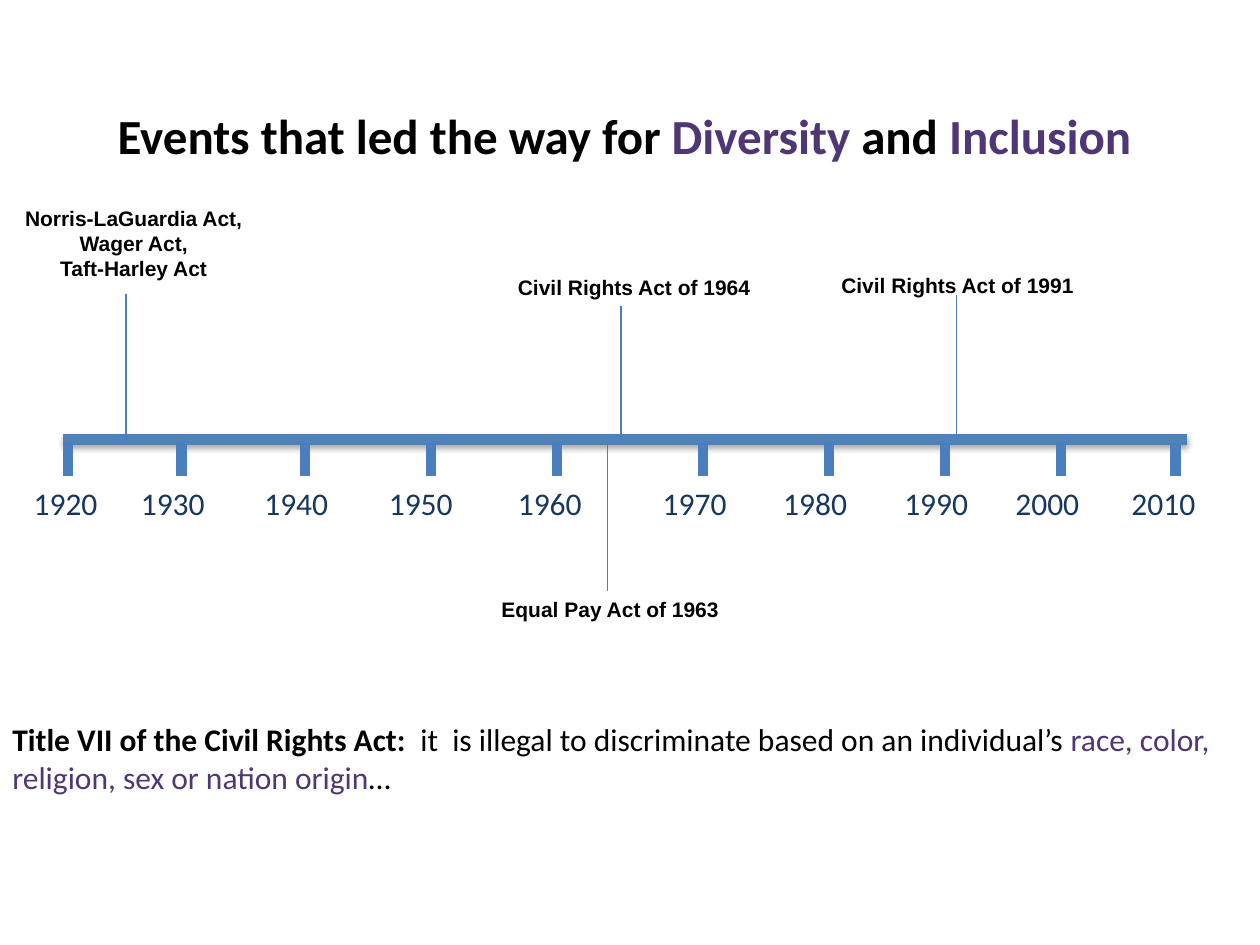
from dataclasses import dataclass

from lxml import etree
from pptx import Presentation
from pptx.dml.color import RGBColor
from pptx.enum import shapes, text
from pptx.oxml.ns import qn
from pptx.util import Cm, Pt


@dataclass(frozen=True)
class Theme:
    axis: str = "4F81BD"
    tick: str = "4B7EBC"
    year: str = "17375E"
    accent: str = "4F3674"
    ink: str = "000000"
    heading_font: str = "Calibri"
    event_font: str = "Arial"
    title_size: float = 28
    body_size: float = 18
    event_size: float = 12
    thick: float = 6
    thin: float = 0.75


@dataclass(frozen=True)
class Span:
    words: str
    color: str
    bold: bool = False


@dataclass(frozen=True)
class Decade:
    year: int
    tick_x: float
    label_left: float


@dataclass(frozen=True)
class Event:
    """A dated act; lengths in centimetres, box as left, top, width, height."""
    lines: tuple[str, ...]
    box: tuple[float, float, float, float]
    line_x: float
    line_start: float
    line_end: float
    wrap: bool = False
    align: text.PP_ALIGN = text.PP_ALIGN.LEFT


THEME = Theme()
CENTER = text.PP_ALIGN.CENTER
AXIS_Y, TICK_TOP, TICK_BOTTOM, LABEL_TOP = 8.86, 8.94, 9.6, 9.63

DECADES = [
    Decade(1920, 1.37, 0.43), Decade(1930, 3.66, 2.59),
    Decade(1940, 6.15, 5.08), Decade(1950, 8.69, 7.59),
    Decade(1960, 11.23, 10.19), Decade(1970, 14.17, 13.11),
    Decade(1980, 16.71, 15.54), Decade(1990, 19.05, 17.98),
    Decade(2000, 21.39, 20.22), Decade(2010, 23.7, 22.56),
]

EVENTS = [
    Event(("Norris-LaGuardia Act, ", "Wager Act, ", "Taft-Harley Act "),
          (0, 4.01, 5.51, 1.8), 2.54, AXIS_Y, 5.92, wrap=True, align=CENTER),
    Event(("Equal Pay Act of 1963",), (9.86, 11.91, 5.05, 0.76), 12.24, 11.91, 8.97),
    Event(("Civil Rights Act of 1964",), (10.19, 5.41, 5.36, 0.76), 12.52, AXIS_Y, 6.17),
    Event(("Civil Rights Act of 1991",), (16.71, 5.36, 5.36, 0.76), 19.28, AXIS_Y, 5.94),
]


def add_text(page, paragraphs: list[list[Span]], *, at: tuple[float, float, float, float],
             font: str, size: float, align=text.PP_ALIGN.LEFT, wrap: bool = True):
    box = page.shapes.add_textbox(*(Cm(length) for length in at))
    frame = box.text_frame
    frame.word_wrap = wrap
    frame.auto_size = text.MSO_AUTO_SIZE.SHAPE_TO_FIT_TEXT
    for index, spans in enumerate(paragraphs):
        para = frame.add_paragraph() if index else frame.paragraphs[0]
        para.alignment = align
        for span in spans:
            run = para.add_run()
            run.text = span.words
            run.font.name = font
            run.font.size = Pt(size)
            run.font.bold = span.bold
            run.font.color.rgb = RGBColor.from_string(span.color)
    return box


def add_line(page, start: tuple[float, float], end: tuple[float, float], *,
             color: str, width: float, shadow: bool = False):
    line = page.shapes.add_connector(
        shapes.MSO_CONNECTOR.STRAIGHT, *(Cm(length) for length in start + end))
    line.line.color.rgb = RGBColor.from_string(color)
    line.line.width = Pt(width)
    effects = etree.SubElement(line._element.spPr, qn("a:effectLst"))
    if shadow:
        outer = etree.SubElement(effects, qn("a:outerShdw"), blurRad="40000",
                                 dist="23000", dir="5400000", rotWithShape="0")
        tone = etree.SubElement(outer, qn("a:srgbClr"), val=THEME.ink)
        etree.SubElement(tone, qn("a:alpha"), val="35000")
    return line


def add_decade(page, decade: Decade) -> None:
    add_line(page, (decade.tick_x, TICK_TOP), (decade.tick_x, TICK_BOTTOM),
             color=THEME.tick, width=THEME.thick)
    add_text(page, [[Span(str(decade.year), THEME.year)]],
             at=(decade.label_left, LABEL_TOP, 2.34, 1.02),
             font=THEME.heading_font, size=THEME.body_size)


def add_event(page, event: Event) -> None:
    add_line(page, (event.line_x, event.line_start), (event.line_x, event.line_end),
             color=THEME.tick, width=THEME.thin)
    add_text(page, [[Span(line, THEME.ink, bold=True)] for line in event.lines],
             at=event.box, font=THEME.event_font, size=THEME.event_size,
             align=event.align, wrap=event.wrap)


def main() -> None:
    deck = Presentation()
    deck.slide_width, deck.slide_height = Cm(25.4), Cm(19.05)
    page = deck.slides.add_slide(deck.slide_layouts[6])

    add_line(page, (1.27, AXIS_Y), (23.93, AXIS_Y),
             color=THEME.axis, width=THEME.thick, shadow=True)
    title = [
        Span("Events that led the way for ", THEME.ink, bold=True),
        Span("Diversity ", THEME.accent, bold=True),
        Span("and ", THEME.ink, bold=True),
        Span("Inclusion ", THEME.accent, bold=True),
    ]
    add_text(page, [title], at=(0, 2.01, 25.4, 1.45), font=THEME.heading_font,
             size=THEME.title_size, align=CENTER)
    for decade in DECADES:
        add_decade(page, decade)
    for event in EVENTS:
        add_event(page, event)
    statute = [
        Span("Title VII of the Civil Rights Act:  ", THEME.ink, bold=True),
        Span("it  is illegal to discriminate based on an individual’s ", THEME.ink),
        Span("race, color, religion, sex or nation origin", THEME.accent),
        Span("…", THEME.ink),
    ]
    add_text(page, [statute], at=(0, 14.4, 25.4, 1.8),
             font=THEME.heading_font, size=THEME.body_size)
    deck.save("out.pptx")


if __name__ == "__main__":
    main()
